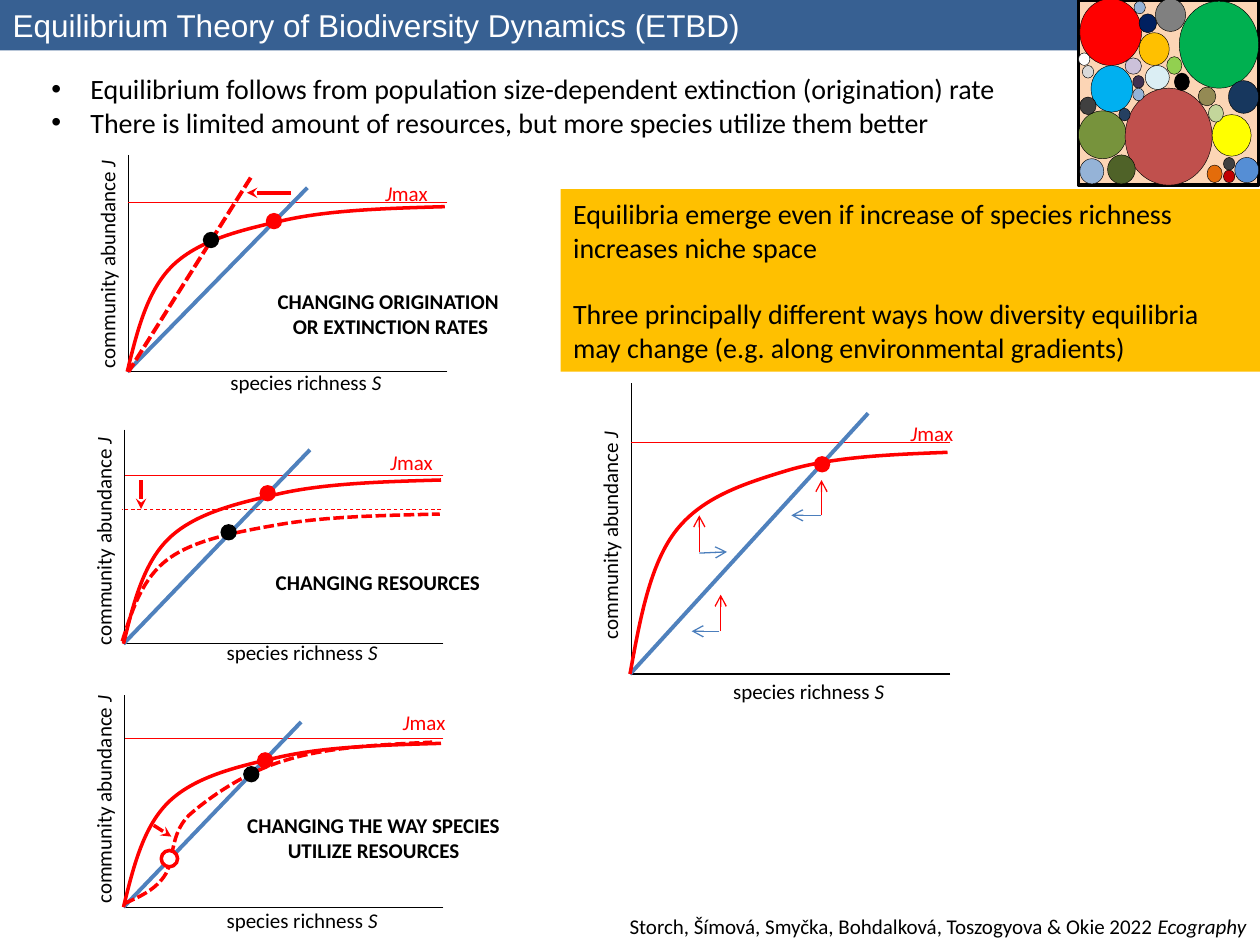
"""Build the slide on the equilibrium theory of biodiversity dynamics."""
from dataclasses import dataclass
from typing import NamedTuple

from lxml import etree
from pptx import Presentation
from pptx.dml.color import RGBColor
from pptx.enum import dml, shapes, text
from pptx.oxml import ns
from pptx.util import Inches, Pt

RED, BLUE, BLACK, WHITE = "FF0000", "4F81BD", "000000", "FFFFFF"
ARROW_BLUE = "4B7EBC"
DOT_SIZE = 0.13
AXIS_LENGTH = 2.53
DASH = dml.MSO_LINE.DASH
SHORT_DASH = dml.MSO_LINE.SQUARE_DOT
SATURATION = [(0, 1), (0.08, 0.75), (0.16, 0.5), (0.37, 0.35), (0.58, 0.2),
              (0.91, 0.14), (1.26, 0.08), (1.62, 0.02), (2.07, 0.01), (2.52, 0)]
SIGMOID = [(0.99, 7.17), (1.1, 7.12), (1.22, 7.07), (1.3, 6.96), (1.39, 6.84),
           (1.34, 6.63), (1.5, 6.47), (1.67, 6.32), (1.96, 6.12), (2.28, 6.03),
           (2.6, 5.93), (3.02, 5.91), (3.43, 5.89)]

Point = tuple[float, float]


class Run(NamedTuple):
    words: str
    italic: bool = False


class Bubble(NamedTuple):
    left: float
    top: float
    width: float
    height: float
    color: str


class Arrow(NamedTuple):
    start: Point
    end: Point
    color: str
    width: float
    head: str


class Dot(NamedTuple):
    left: float
    top: float
    color: str
    outline: str | None = None


@dataclass
class Panel:
    left: float
    top: float
    base: float
    limit: float
    curve_top: float
    line_end: Point
    richness_top: float
    abundance_top: float
    limit_label: Point


PANELS = [
    Panel(5.01, 3.04, 5.35, 3.51, 3.59, (6.89, 3.28), 5.34, 4.09, (7.13, 3.29)),
    Panel(0.99, 5.52, 7.2, 5.86, 5.9, (2.39, 5.73), 7.15, 6.19, (3.1, 5.58)),
    Panel(0.99, 3.41, 5.11, 3.77, 3.81, (2.46, 3.57), 5.03, 4.14, (3, 3.52)),
    Panel(1.02, 1.23, 2.95, 1.61, 1.64, (2.44, 1.49), 2.88, 1.94, (2.96, 1.38)),
]
BUBBLES = [Bubble(*values) for values in [
    (9.8, 1.25, 0.19, 0.2, "558ED5"), (8.57, -0.01, 0.49, 0.53, RED),
    (8.56, 0.42, 0.09, 0.1, WHITE), (8.59, 0.52, 0.09, 0.1, "D9D9D9"),
    (9, 0.01, 0.09, 0.1, "95B3D7"), (9.36, 0.01, 0.63, 0.69, "00B050"),
    (9.75, 0.64, 0.24, 0.26, "17375E"), (8.66, 0.52, 0.33, 0.37, "00B0F0"),
    (8.57, 1.26, 0.19, 0.2, "95B3D7"), (8.56, 0.88, 0.38, 0.38, "77933C"),
    (8.57, 0.77, 0.13, 0.14, "404040"), (8.93, 0.7, 0.69, 0.77, "C0504D"),
    (8.93, 0.46, 0.13, 0.13, "CCC1DA"), (9.71, 1.35, 0.09, 0.1, "C00000"),
    (8.88, 0.86, 0.09, 0.1, "254061"), (9.04, 0.11, 0.14, 0.15, "002060"),
    (8.79, 1.23, 0.22, 0.23, "4F6228"), (8.99, 0.6, 0.09, 0.1, "403152"),
    (8.99, 0.7, 0.09, 0.1, "95B3D7"), (9.71, 1.25, 0.09, 0.1, "404040"),
    (9.04, 0.26, 0.24, 0.26, "FFC000"), (9.58, 1.31, 0.12, 0.14, "E46C0A"),
    (9.62, 0.91, 0.31, 0.33, "FFFF00"), (9.59, 0.83, 0.12, 0.14, "C3D69B"),
    (9.09, 0.52, 0.19, 0.19, "DBEEF4"), (9.17, -0.01, 0.24, 0.26, "808080"),
    (9.26, 0.45, 0.12, 0.14, "92D050"), (9.51, 0.69, 0.14, 0.15, "948A54"),
    (9.32, 0.58, 0.12, 0.14, BLACK),
]]
ARROWS = [
    Arrow((5.55, 4.39), (5.77, 4.38), ARROW_BLUE, 0.75, "arrow"),
    Arrow((6.52, 4.09), (6.28, 4.09), ARROW_BLUE, 0.75, "arrow"),
    Arrow((5.71, 5.01), (5.49, 5.01), ARROW_BLUE, 0.75, "arrow"),
    Arrow((5.55, 4.38), (5.55, 4.09), RED, 0.75, "arrow"),
    Arrow((6.52, 4.09), (6.52, 3.81), RED, 0.75, "arrow"),
    Arrow((5.72, 5.01), (5.72, 4.72), RED, 0.75, "arrow"),
    Arrow((1.22, 6.55), (1.36, 6.64), RED, 2, "stealth"),
    Arrow((1.12, 3.81), (1.12, 4.04), RED, 2, "stealth"),
    Arrow((2.31, 1.53), (1.96, 1.53), RED, 2, "stealth"),
]
DOTS = [Dot(6.46, 3.62, RED), Dot(2.04, 5.97, RED), Dot(1.93, 6.08, BLACK),
        Dot(1.28, 6.75, WHITE, RED), Dot(2.06, 3.85, RED), Dot(1.75, 4.16, BLACK),
        Dot(2.11, 1.69, RED), Dot(1.61, 1.84, BLACK)]


def rgb(color: str) -> RGBColor:
    return RGBColor.from_string(color)


def apply(target, **values) -> None:
    for name, value in values.items():
        setattr(target, name, value)


def style_line(line, color: str, width: float, dash=None) -> None:
    line.color.rgb = rgb(color)
    apply(line, width=Pt(width), dash_style=dash)


def write(shape, paragraphs, size=12, color=BLACK, font="Calibri", bold=False,
          align=text.PP_ALIGN.LEFT, wrap=False, gap=0) -> None:
    frame = shape.text_frame
    apply(frame, word_wrap=wrap, auto_size=text.MSO_AUTO_SIZE.SHAPE_TO_FIT_TEXT)
    for index, runs in enumerate(paragraphs):
        paragraph = frame.add_paragraph() if index else frame.paragraphs[0]
        apply(paragraph, alignment=align, space_before=Pt(gap if index else 0))
        for words, italic in runs:
            run = paragraph.add_run()
            run.text = words
            apply(run.font, name=font, size=Pt(size), bold=bold, italic=italic)
            run.font.color.rgb = rgb(color)


def add_label(slide, box, paragraphs, rotation=0, **style):
    shape = slide.shapes.add_textbox(*map(Inches, box))
    shape.rotation = rotation
    write(shape, paragraphs, **style)
    return shape


def add_filled(slide, kind, box, color: str, outline=None, width=0.25):
    shape = slide.shapes.add_shape(kind, *map(Inches, box))
    shape.shadow.inherit = False
    shape.fill.solid()
    shape.fill.fore_color.rgb = rgb(color)
    if outline:
        style_line(shape.line, outline, width)
    else:
        shape.line.fill.background()
    return shape


def add_line(slide, start: Point, end: Point, color: str, width: float,
             dash=None, head=None) -> None:
    connector = slide.shapes.add_connector(
        shapes.MSO_CONNECTOR.STRAIGHT, *map(Inches, (*start, *end)))
    style_line(connector.line, color, width, dash)
    properties = connector._element.spPr
    if head:
        etree.SubElement(properties.find(ns.qn("a:ln")), ns.qn("a:tailEnd"), type=head)
    etree.SubElement(properties, ns.qn("a:effectLst"))


def add_curve(slide, points: list[Point], dash=None) -> None:
    start, *controls = [tuple(map(Inches, point)) for point in points]
    builder = slide.shapes.build_freeform(*start)
    builder.add_line_segments(controls, close=False)
    curve = builder.convert_to_shape()
    outline = next(curve._element.iter(ns.qn("a:path")))
    segments = outline.findall(ns.qn("a:lnTo"))
    for first in range(0, len(segments), 3):
        bezier = etree.SubElement(outline, ns.qn("a:cubicBezTo"))
        for segment in segments[first:first + 3]:
            bezier.append(segment[0])
            outline.remove(segment)
    curve.shadow.inherit = False
    curve.fill.background()
    style_line(curve.line, RED, 2, dash)


def add_saturation(slide, left: float, top: float, base: float, dash=None) -> None:
    add_curve(slide, [(left + x, top + y * (base - top)) for x, y in SATURATION], dash)


def add_panel(slide, panel: Panel) -> None:
    left, right, base = panel.left, panel.left + AXIS_LENGTH, panel.base
    add_line(slide, (left, panel.top), (left, base), BLACK, 0.75)
    add_line(slide, (right, base), (left, base), BLACK, 0.75)
    add_line(slide, (right, panel.limit), (left, panel.limit), RED, 0.5)
    add_line(slide, panel.line_end, (left - 0.01, base), BLUE, 2.25)
    add_saturation(slide, left - 0.01, panel.curve_top, base)
    add_label(slide, (left + 0.71, panel.richness_top, 1.42, 0.3),
              [[Run("species richness "), Run("S", True)]])
    add_label(slide, (left - 1.1, panel.abundance_top, 1.86, 0.3),
              [[Run("community abundance "), Run("J", True)]], rotation=270)
    add_label(slide, (*panel.limit_label, 0.54, 0.3), [[Run("J", True), Run("max")]], color=RED)


def add_title(slide) -> None:
    title = slide.shapes.title
    apply(title, left=0, top=0, width=Inches(10), height=Inches(0.4))
    title.fill.solid()
    title.fill.fore_color.rgb = rgb("376092")
    write(title, [[Run("Equilibrium Theory of Biodiversity Dynamics (ETBD)")]],
          size=18, color=WHITE, font="Arial", wrap=True)
    apply(title.text_frame, auto_size=text.MSO_AUTO_SIZE.NONE,
          vertical_anchor=text.MSO_ANCHOR.MIDDLE)


def add_bullets(slide) -> None:
    label = add_label(slide, (0.31, 0.52, 7.79, 0.64), [
        [Run("Equilibrium follows from population size-dependent extinction (origination) rate")],
        [Run("There is limited amount of resources, but more species utilize them better")],
    ], size=16)
    for paragraph in label.text_frame.paragraphs:
        properties = paragraph._p.get_or_add_pPr()
        properties.set("marL", str(Inches(0.31)))
        properties.set("indent", str(-Inches(0.31)))
        etree.SubElement(properties, ns.qn("a:buFont"), typeface="Arial")
        etree.SubElement(properties, ns.qn("a:buChar"), char="•")


def main() -> None:
    presentation = Presentation()
    apply(presentation, slide_width=Inches(10), slide_height=Inches(7.5))
    slide = presentation.slides.add_slide(presentation.slide_layouts[5])
    rectangle, ellipse = shapes.MSO_SHAPE.RECTANGLE, shapes.MSO_SHAPE.OVAL
    center = text.PP_ALIGN.CENTER
    add_title(slide)
    add_filled(slide, rectangle, (8.56, 0, 1.43, 1.47), "FCD5B5", BLACK, 2)
    for *box, color in BUBBLES:
        add_filled(slide, ellipse, box, color, BLACK)
    message = add_filled(slide, rectangle, (4.45, 1.5, 5.55, 1.45), "FFC000")
    write(message, [
        [Run("Equilibria emerge even if increase of species richness increases niche space")],
        [Run("Three principally different ways how diversity equilibria may change "
             "(e.g. along environmental gradients)")],
    ], size=16, wrap=True, gap=19)
    for panel in PANELS:
        add_panel(slide, panel)
    add_curve(slide, SIGMOID, SHORT_DASH)
    add_line(slide, (3.5, 4.04), (0.97, 4.04), RED, 0.5, DASH)
    add_saturation(slide, 0.97, 4.08, 5.09, SHORT_DASH)
    add_line(slide, (1.99, 1.41), (1.02, 2.95), RED, 2.25, SHORT_DASH)
    for arrow in ARROWS:
        add_line(slide, arrow.start, arrow.end, arrow.color, arrow.width, head=arrow.head)
    for dot in DOTS:
        add_filled(slide, ellipse, (dot.left, dot.top, DOT_SIZE, DOT_SIZE),
                   dot.color, dot.outline, 2)
    add_label(slide, (2.09, 2.24, 2.02, 0.5),
              [[Run("CHANGING ORIGINATION ")], [Run("OR EXTINCTION RATES")]],
              bold=True, align=center)
    add_label(slide, (2.09, 4.47, 1.84, 0.3), [[Run("CHANGING RESOURCES")]], bold=True)
    add_label(slide, (1.77, 6.4, 2.39, 0.5),
              [[Run("CHANGING THE WAY SPECIES UTILIZE RESOURCES")]],
              bold=True, align=center, wrap=True)
    add_label(slide, (4.84, 7.2, 5.15, 0.3),
              [[Run("Storch, Šímová, Smyčka, Bohdalková, Toszogyova & Okie 2022 "),
                Run("Ecography", True)]], align=text.PP_ALIGN.RIGHT)
    add_bullets(slide)
    presentation.save("out.pptx")


if __name__ == "__main__":
    main()
